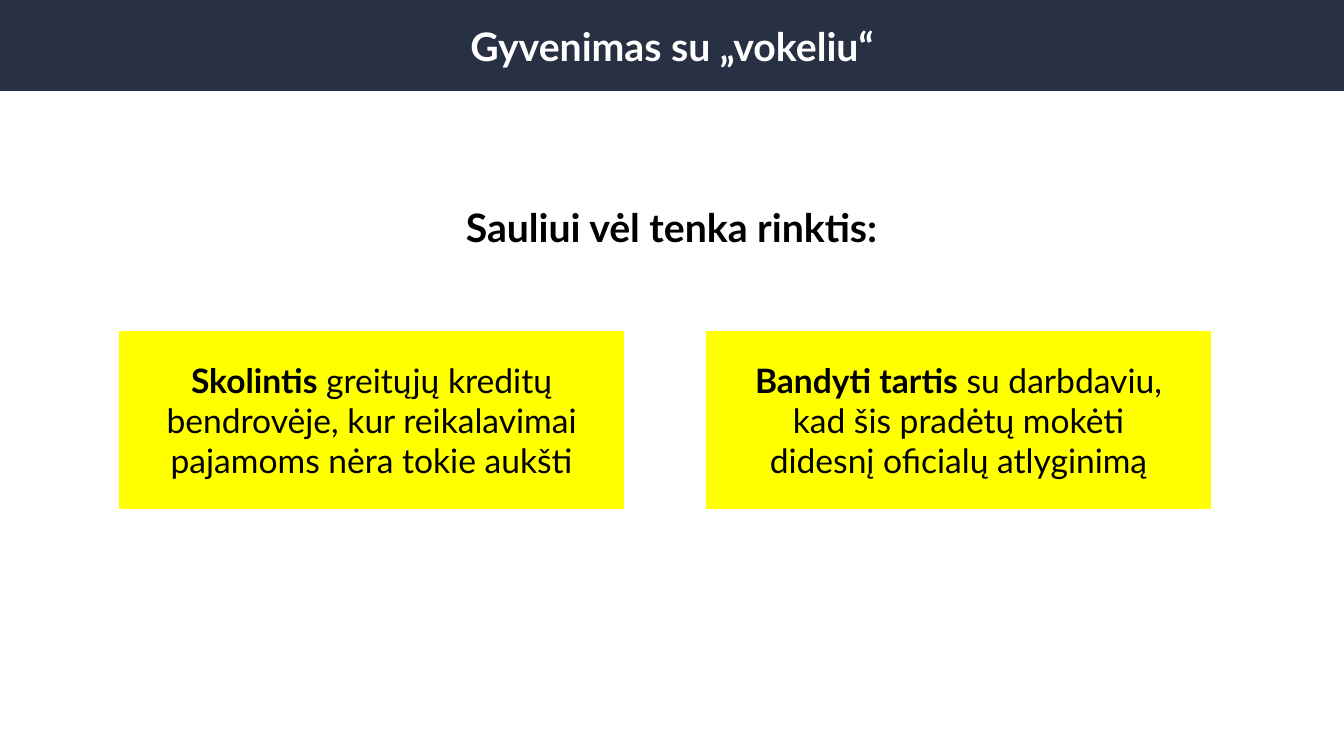
from pptx import Presentation
from pptx import util as u
from pptx.dml.color import RGBColor
from pptx.enum import shapes, text

TITLE = "Gyvenimas su „vokeliu“"
QUESTION = "Sauliui vėl tenka rinktis:"
CHOICES = [
    ("Skolintis", " greitųjų kreditų bendrovėje, kur reikalavimai pajamoms nėra tokie aukšti"),
    ("Bandyti tartis", " su darbdaviu, kad šis pradėtų mokėti didesnį oficialų atlyginimą"),
]
COLORS = {"bar": "283044", "card": "FFFF00", "dark": "000000", "light": "FFFFFF"}
FONT = "Lato"
HEADING_SIZE, CARD_SIZE = 28, 24

SLIDE_WIDTH, SLIDE_HEIGHT = 1344, 756
BAR_HEIGHT = 91
QUESTION_BOX = (431, 198, 481, 57)
CARD_LEFT, CARD_TOP, CARD_WIDTH, CARD_HEIGHT = 119, 331, 505, 178
CARD_GAP, CARD_INSET = 82, 31


def px(length):
    return u.Emu(round(length * 914400 / 100.8))


def place(shape, left, top, width, height):
    shape.left, shape.top, shape.width, shape.height = map(px, (left, top, width, height))


def paint(shape, color):
    shape.fill.solid()
    shape.fill.fore_color.rgb = RGBColor.from_string(COLORS[color])
    shape.line.fill.background()


def write(shape, runs, size, color, inset=10):
    """Fill a shape with one centred paragraph of (wording, bold) runs."""
    frame = shape.text_frame
    frame.word_wrap = True
    frame.auto_size = text.MSO_AUTO_SIZE.NONE
    frame.vertical_anchor = text.MSO_ANCHOR.MIDDLE
    frame.margin_left = frame.margin_right = px(inset)
    frame.margin_top = frame.margin_bottom = px(5)
    paragraph = frame.paragraphs[0]
    paragraph.alignment = text.PP_ALIGN.CENTER
    for wording, bold in runs:
        run = paragraph.add_run()
        run.text = wording
        run.font.name = FONT
        run.font.size = u.Pt(size)
        run.font.bold = bold
        run.font.color.rgb = RGBColor.from_string(COLORS[color])


def main():
    presentation = Presentation()
    presentation.slide_width, presentation.slide_height = px(SLIDE_WIDTH), px(SLIDE_HEIGHT)
    slide = presentation.slides.add_slide(presentation.slide_layouts[5])

    title = slide.shapes.title
    place(title, 0, 0, SLIDE_WIDTH, BAR_HEIGHT)
    paint(title, "bar")
    write(title, [(TITLE, True)], HEADING_SIZE, "light")

    question = slide.shapes.add_textbox(*map(px, QUESTION_BOX))
    write(question, [(QUESTION, True)], HEADING_SIZE, "dark")

    for index, (action, details) in enumerate(CHOICES):
        left = CARD_LEFT + index * (CARD_WIDTH + CARD_GAP)
        card = slide.shapes.add_shape(
            shapes.MSO_SHAPE.RECTANGLE, *map(px, (left, CARD_TOP, CARD_WIDTH, CARD_HEIGHT)))
        card.shadow.inherit = False
        paint(card, "card")
        write(card, [(action, True), (details, False)], CARD_SIZE, "dark", CARD_INSET)

    presentation.save("out.pptx")


if __name__ == "__main__":
    main()
